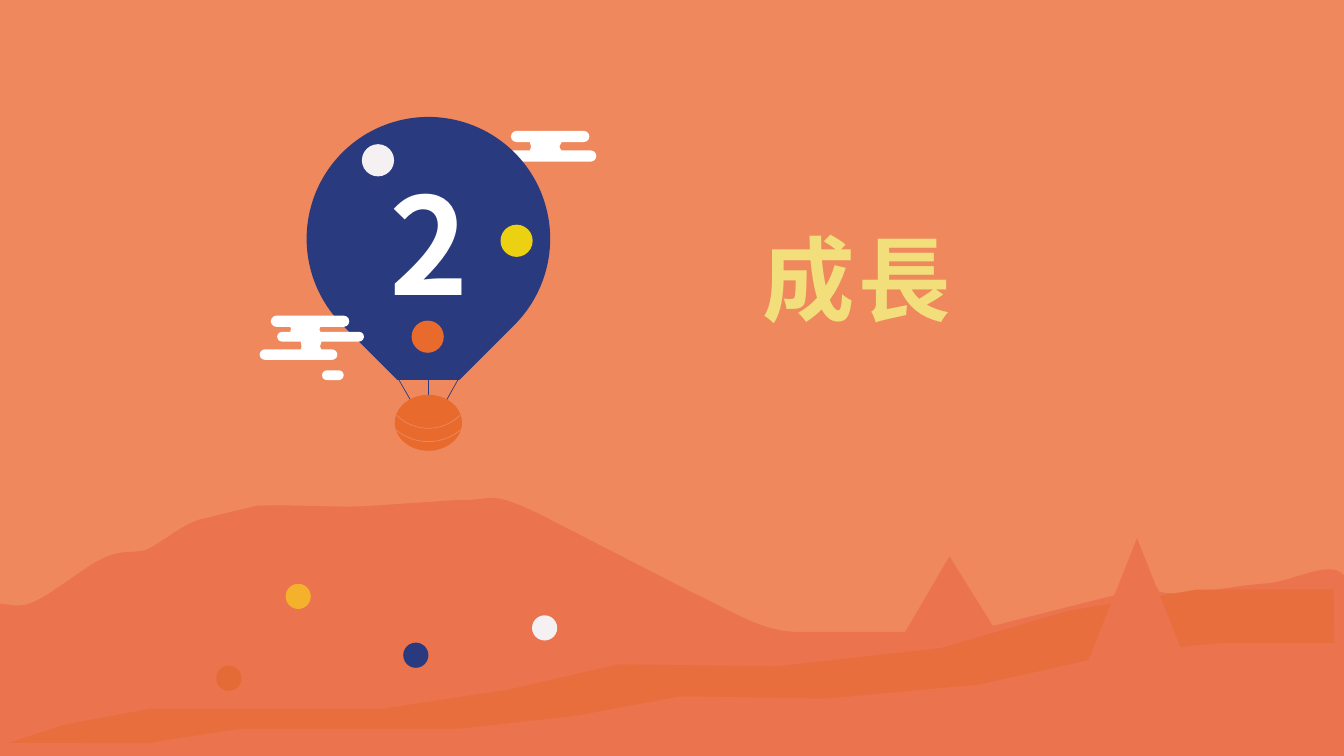
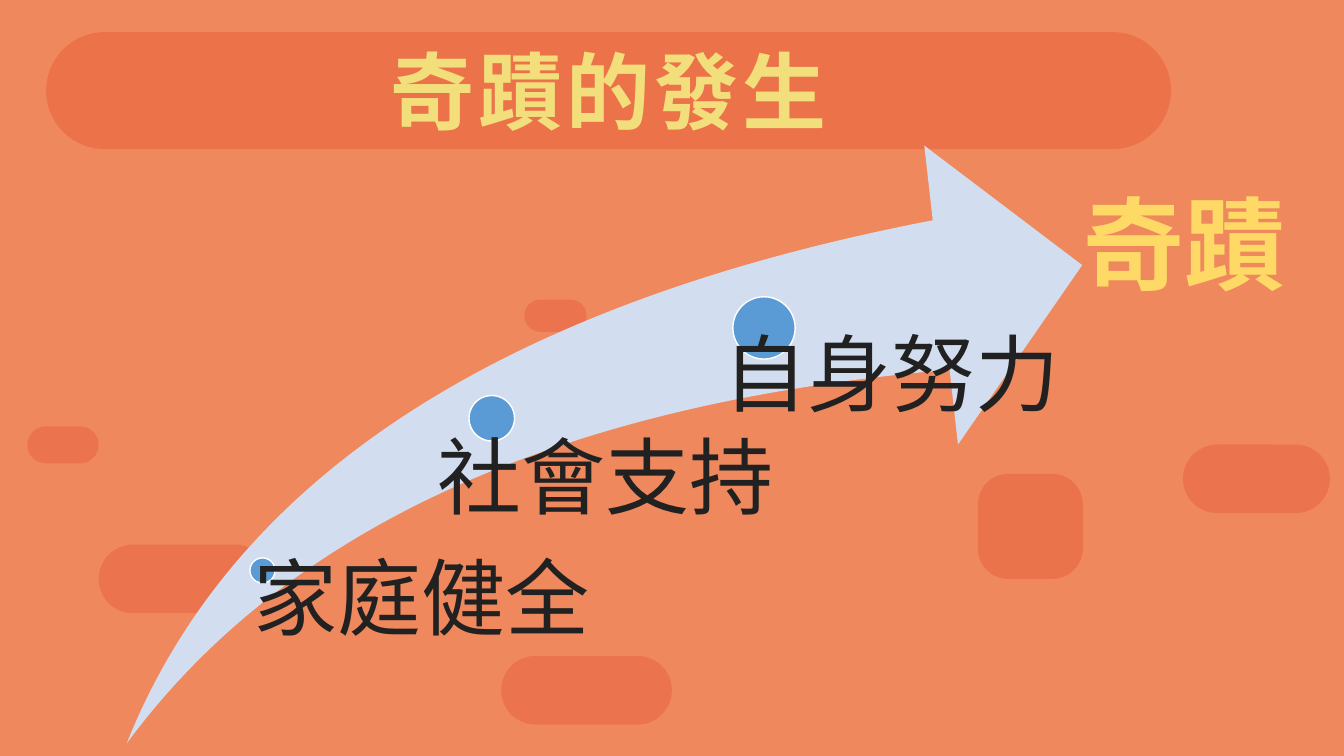
import lxml.etree
import pptx
import pptx.dml.color
import pptx.enum.shapes
import pptx.enum.text
import pptx.oxml.ns
import pptx.util

Pt = pptx.util.Pt
qn = pptx.oxml.ns.qn
SHAPE = pptx.enum.shapes.MSO_SHAPE
ALIGN = pptx.enum.text.PP_ALIGN

COLORS = {
    "sky": "EF885D",
    "hill": "EB734E",
    "ridge": "E86F3D",
    "band": "EC7249",
    "stone": "EB734C",
    "title": "F3DE7C",
    "gold": "FFD966",
    "navy": "2A3A7E",
    "orange": "E86A2D",
    "rust": "E56B36",
    "amber": "F4B12B",
    "yellow": "ECD012",
    "pearl": "F5F0F1",
    "white": "FFFFFF",
    "arrow": "D2DEEF",
    "blue": "5B9BD5",
    "ink": "212121",
}
FONT_SC = "Noto Sans CJK SC"
FONT_JP = "Noto Sans CJK JP"

# Outlines: a pair is a straight step, six numbers are a Bezier curve.
FAR_HILL = [
    (351.4, 355.7), (358.6, 355.7, 367.2, 358.6, 385.2, 367.2),
    (493.2, 422.6), (524.2, 437, 544.3, 451.4, 570.2, 451.4),
    (646.6, 451.4), (678.2, 397.4), (709.2, 447.1), (797.8, 424.8),
    (811.4, 394.6), (828, 422.6), (843.1, 427, 880.6, 418.3, 902.9, 416.9),
    (925.2, 415.4, 950, 399, 960, 411), (960, 540), (0, 540), (0, 431.3),
    (4.3, 431.3, 10.1, 433.4, 18, 432), (31, 429.8, 59, 405.4, 73.4, 398.9),
    (87.8, 392.4, 93.6, 395.3, 103.7, 393.1),
    (115.2, 388.1, 131, 373.7, 144, 370.8), (182.9, 361.4),
    (203, 360, 242.6, 362.9, 264.2, 361.4), (328.3, 357.1),
    (338.4, 357.8, 344.2, 355.7, 351.4, 355.7),
]
RIDGE = [
    (6, 530.6), (46, 517.7), (107.3, 506.2), (174.2, 506.2), (273.6, 506.2),
    (363.6, 492.5), (442, 474.5), (554.4, 476), (671.8, 463), (763.2, 436.3),
    (854.6, 421.2), (952.6, 421.2), (954, 532.8),
]
NEAR_HILL = [
    (812.2, 384.5), (843.1, 462.2), (871.2, 459.4), (960, 459.4), (960, 540),
    (77.8, 538.6), (115.2, 529.2), (172.8, 520.6), (235.4, 520.6),
    (328.3, 520.6), (412.6, 511.2), (486, 497.5), (591.1, 499),
    (700.6, 488.9), (777.6, 471.6),
]
# Drawn in a unit square.
CLOUD_NECK = [
    (0.06, 0.5), (0.06, 0.27, -0.05, 0.1, 0.1, 0.06),
    (0.24, 0, 0.8, 0, 0.95, 0.06), (1.09, 0.12, 0.94, 0.33, 0.94, 0.5),
    (0.94, 0.67, 1.09, 0.88, 0.95, 0.94), (0.8, 1, 0.24, 1, 0.1, 0.94),
    (-0.05, 0.9, 0.06, 0.73, 0.06, 0.5),
]


def rgb(color):
    return pptx.dml.color.RGBColor.from_string(COLORS[color])


def paint(shape, fill=None, line=None, width=1):
    shape.shadow.inherit = False
    if fill:
        shape.fill.solid()
        shape.fill.fore_color.rgb = rgb(fill)
    else:
        shape.fill.background()
    if line:
        shape.line.color.rgb = rgb(line)
        shape.line.width = Pt(width)
    else:
        shape.line.fill.background()


def add_preset(slide, kind, frame, fill=None, line=None, width=1, adjust=()):
    shape = slide.shapes.add_shape(kind, *map(Pt, frame))
    for index, value in enumerate(adjust):
        shape.adjustments[index] = value
    paint(shape, fill, line, width)
    return shape


def add_dot(slide, left, top, size, fill, line=None):
    add_preset(slide, SHAPE.OVAL, (left, top, size, size), fill, line)


def add_pill(slide, frame, fill, roundness=0.5):
    add_preset(slide, SHAPE.ROUNDED_RECTANGLE, frame, fill, adjust=[roundness])


def add_string(slide, start, end):
    """Draw one rope between the balloon and its basket."""
    string = slide.shapes.add_connector(
        pptx.enum.shapes.MSO_CONNECTOR.STRAIGHT, *map(Pt, start + end))
    string.line.color.rgb = rgb("navy")
    string.line.width = Pt(0.5)
    lxml.etree.SubElement(string.element.spPr, qn("a:effectLst"))


def bend(shape, outline):
    """Turn each three line steps that stand for a curve into that curve."""
    steps = iter(list(shape.element.iter(qn("a:lnTo"))))
    for part in outline[1:]:
        step = next(steps)
        if len(part) == 6:
            curve = lxml.etree.Element(qn("a:cubicBezTo"))
            step.addprevious(curve)
            for corner in (step, next(steps), next(steps)):
                curve.append(corner[0])
                corner.getparent().remove(corner)


def add_outline(slide, outline, fill, frame=(0, 0, 1, 1)):
    """Draw an outline, placed and scaled by frame."""
    left, top, width, height = frame
    points = [(Pt(left + part[i] * width), Pt(top + part[i + 1] * height))
              for part in outline for i in range(0, len(part), 2)]
    builder = slide.shapes.build_freeform(*points[0])
    builder.add_line_segments(points[1:], close=True)
    shape = builder.convert_to_shape()
    bend(shape, outline)
    paint(shape, fill)


def write(box, text, size, color, font=FONT_SC, bold=True,
          align=ALIGN.CENTER, spacing=0, inset=0):
    frame = box.text_frame
    frame.word_wrap = True
    frame.auto_size = pptx.enum.text.MSO_AUTO_SIZE.NONE
    frame.vertical_anchor = pptx.enum.text.MSO_ANCHOR.MIDDLE
    frame.margin_left = Pt(inset)
    frame.margin_right = frame.margin_top = frame.margin_bottom = 0
    para = frame.paragraphs[0]
    para.alignment = align
    span = para.add_run()
    span.text = text
    span.font.size = Pt(size)
    span.font.bold = bold
    span.font.name = font
    span.font.color.rgb = rgb(color)
    properties = span._r.get_or_add_rPr()
    if spacing:
        properties.set("spc", str(spacing * 100))
    lxml.etree.SubElement(properties, qn("a:ea")).set("typeface", font)


def add_text(slide, frame, text, size, color, **style):
    write(slide.shapes.add_textbox(*map(Pt, frame)), text, size, color, **style)


def set_title(slide, frame, text, size):
    """Place the title placeholder in front of what is drawn so far."""
    title = slide.shapes.title
    title.left, title.top, title.width, title.height = map(Pt, frame)
    write(title, text, size, "title", spacing=3)
    title.element.getparent().append(title.element)


def add_cloud(slide, bars, necks):
    for frame in bars:
        add_pill(slide, frame, "white")
    for frame in necks:
        add_outline(slide, CLOUD_NECK, "white", frame)


def add_balloon(slide):
    envelope = add_preset(slide, SHAPE.TEAR, (219, 83.5, 174, 174), "navy")
    envelope.rotation = 135
    add_preset(slide, SHAPE.RECTANGLE, (238, 271.5, 136, 24), "sky")
    for start, end in [((285, 271.5), (294.5, 288)),
                       ((306, 271.5), (306, 282)),
                       ((327, 271.5), (317.5, 288.5))]:
        add_string(slide, start, end)
    add_preset(slide, SHAPE.OVAL, (282, 282, 48, 40), "orange")
    # Arc angles are in 60000ths of a degree, adjustments in 100000ths.
    for left, top, size, first, last in [(274, 242, 64, 45, 135),
                                         (270, 243.5, 72, 50, 130)]:
        add_preset(slide, SHAPE.ARC, (left, top, size, size), line="sky",
                   width=0.5, adjust=[first * 0.6, last * 0.6])
    for left, top, color in [(258.5, 103, "pearl"), (294, 229, "orange"),
                             (357.5, 160.5, "yellow")]:
        add_dot(slide, left, top, 23, color)


def build_section(slide):
    add_cloud(slide, [(365, 93.5, 56, 8), (357, 107.5, 69, 8)],
              [(378, 100, 23, 9.5)])
    add_outline(slide, FAR_HILL, "hill")
    add_outline(slide, RIDGE, "ridge")
    for left, top, color in [(154.5, 475.5, "rust"), (288, 459, "navy"),
                             (204, 417, "amber"), (380, 439.5, "pearl")]:
        add_dot(slide, left, top, 18, color)
    add_balloon(slide)
    set_title(slide, (430, 155, 364, 87), "成長", 66)
    add_cloud(slide, [(230, 264.5, 15.5, 7), (193.5, 225.5, 56, 8),
                      (198, 237, 62, 7), (185.5, 249.5, 55.5, 7.5)],
              [(206.5, 230.5, 23, 9.5), (214.5, 242.5, 15, 9.5)])
    add_outline(slide, NEAR_HILL, "hill")
    add_text(slide, (272, 110.5, 69, 124), "2", 96, "white")


def build_miracle(slide):
    for frame in [(845, 317.5, 105, 49), (19.5, 304.5, 51, 26.5),
                  (70.5, 389, 122, 49), (358, 468.5, 122, 49),
                  (374.5, 214, 44.5, 23)]:
        add_pill(slide, frame, "hill")
    add_pill(slide, (33, 23, 803.5, 83.5), "band")
    set_title(slide, (33, 22.5, 803.5, 83.5), "奇蹟的發生", 60)
    add_pill(slide, (698.5, 338.5, 75, 75), "stone", 0.29)
    add_preset(slide, SHAPE.SWOOSH_ARROW, (90.5, 104, 682.5, 427), "arrow",
               adjust=[0.25, 0.25])
    steps = [
        ((178.5, 398.5, 18), (171.5, 395.5, 356, 61), 9.5, "家庭健全"),
        ((335, 282.5, 32.5), (295.5, 309, 445, 60), 17, "社會支持"),
        ((523.5, 212, 44.5), (493, 231.5, 276.5, 69), 24, "自身努力"),
    ]
    for dot, frame, inset, text in steps:
        add_dot(slide, *dot, "blue", "white")
        add_text(slide, frame, text, 60, "ink", bold=False,
                 align=ALIGN.LEFT, inset=inset)
    add_text(slide, (756, 126, 180, 94), "奇蹟", 72, "gold", font=FONT_JP)


def main():
    deck = pptx.Presentation()
    deck.slide_width, deck.slide_height = Pt(960), Pt(540)
    background = deck.slide_master.background.fill
    background.solid()
    background.fore_color.rgb = rgb("sky")
    title_only = deck.slide_layouts[5]
    for build in (build_section, build_miracle):
        build(deck.slides.add_slide(title_only))
    deck.save("out.pptx")


if __name__ == "__main__":
    main()
